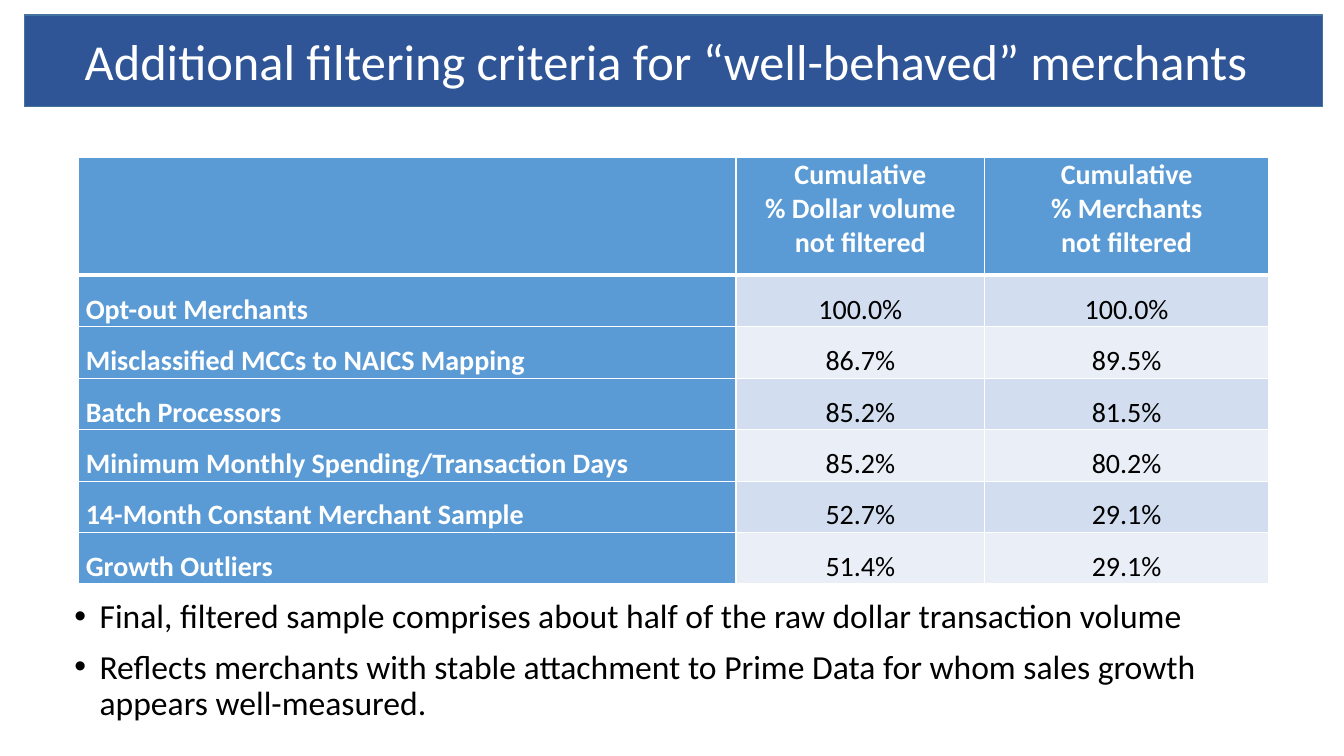
from lxml.etree import SubElement as Sub
from pptx import Presentation
from pptx.dml.color import RGBColor as RGB
from pptx.enum.text import MSO_ANCHOR as Anchor, MSO_AUTO_SIZE as Fit, PP_ALIGN as Align
from pptx.oxml.ns import qn
from pptx.util import Pt

WHITE = RGB(0xFF, 0xFF, 0xFF)
BLACK = RGB(0x00, 0x00, 0x00)
NAVY = RGB(0x2F, 0x55, 0x97)
EDGE = RGB(0x43, 0x73, 0x9E)
BLUE = RGB(0x5B, 0x9B, 0xD5)
BANDS = [RGB(0xEA, 0xEF, 0xF7), RGB(0xD2, 0xDE, 0xEF)]

HEADS = ["", "Cumulative\n% Dollar volume not filtered",
         "Cumulative\n% Merchants\nnot filtered"]
ROWS = [
    HEADS,
    ["Opt-out Merchants", "100.0%", "100.0%"],
    ["Misclassified MCCs to NAICS Mapping", "86.7%", "89.5%"],
    ["Batch Processors", "85.2%", "81.5%"],
    ["Minimum Monthly Spending/Transaction Days", "85.2%", "80.2%"],
    ["14-Month Constant Merchant Sample", "52.7%", "29.1%"],
    ["Growth Outliers", "51.4%", "29.1%"],
]
WIDTHS = [469.4, 177.8, 202.6]
POINTS = [
    "Final, filtered sample comprises about half of the raw dollar transaction volume",
    "Reflects merchants with stable attachment to Prime Data for whom sales growth "
    "appears well-measured.",
]


def style(item, **values):
    for name, value in values.items():
        setattr(item, name, value)


def write(frame, text, size, color, bold=False, **form):
    """Fill the frame, one paragraph a line, and format every paragraph."""
    frame.text = text
    for para in frame.paragraphs:
        style(para, **form)
        for run in para.runs:
            style(run.font, name="Calibri", size=Pt(size), bold=bold)
            run.font.color.rgb = color


deck = Presentation()
style(deck, slide_width=Pt(960), slide_height=Pt(540))
slide = deck.slides.add_slide(deck.slide_layouts[5])

# Title bar
title = slide.shapes.title
style(title, left=Pt(17.3), top=Pt(10.6), width=Pt(927.4), height=Pt(65.7))
title.fill.solid()
title.fill.fore_color.rgb = NAVY
title.line.color.rgb = EDGE
title.line.width = Pt(1)
frame = title.text_frame
style(frame, word_wrap=True, auto_size=Fit.NONE, vertical_anchor=Anchor.MIDDLE)
write(frame, "Additional filtering criteria for “well-behaved” merchants", 36, WHITE,
      alignment=Align.LEFT, line_spacing=1.0)
frame.paragraphs[0]._p.get_or_add_pPr().set("marL", str(Pt(36)))

# Table of filters
table = slide.shapes.add_table(len(ROWS), len(WIDTHS), Pt(56.3), Pt(112.4),
                               Pt(sum(WIDTHS)), Pt(300.2)).table
for column, width in zip(table.columns, WIDTHS):
    column.width = Pt(width)
for r, texts in enumerate(ROWS):
    table.rows[r].height = Pt(36 if r else 84.2)
    for c, text in enumerate(texts):
        cell = table.cell(r, c)
        style(cell, margin_left=Pt(5), margin_right=Pt(5), margin_top=0, margin_bottom=0)
        body = r > 0 and c > 0
        write(cell.text_frame, text, 20, BLACK if body else WHITE, bold=not body,
              alignment=Align.CENTER if c else Align.LEFT,
              line_spacing=1.5 if r else 1.0)
        for side in "LRTB":
            thick = (r, side) in [(0, "B"), (1, "T")]
            line = Sub(cell._tc.get_or_add_tcPr(), qn(f"a:ln{side}"),
                       w=str(Pt(3 if thick else 1)))
            Sub(Sub(line, qn("a:solidFill")), qn("a:srgbClr"), val=str(WHITE))
        cell.fill.solid()
        cell.fill.fore_color.rgb = BANDS[r % 2] if body else BLUE

# Bullet points
notes = slide.shapes.add_textbox(Pt(46.1), Pt(424.8), Pt(873.4), Pt(115))
frame = notes.text_frame
frame.word_wrap = True
write(frame, "\n".join(POINTS), 24, BLACK, line_spacing=0.9, space_before=Pt(10))
for para in frame.paragraphs:
    props = para._p.get_or_add_pPr()
    props.set("marL", str(Pt(18)))
    props.set("indent", str(-Pt(18)))
    Sub(props, qn("a:buFont"), typeface="Arial")
    Sub(props, qn("a:buChar"), char="•")

deck.save("out.pptx")
